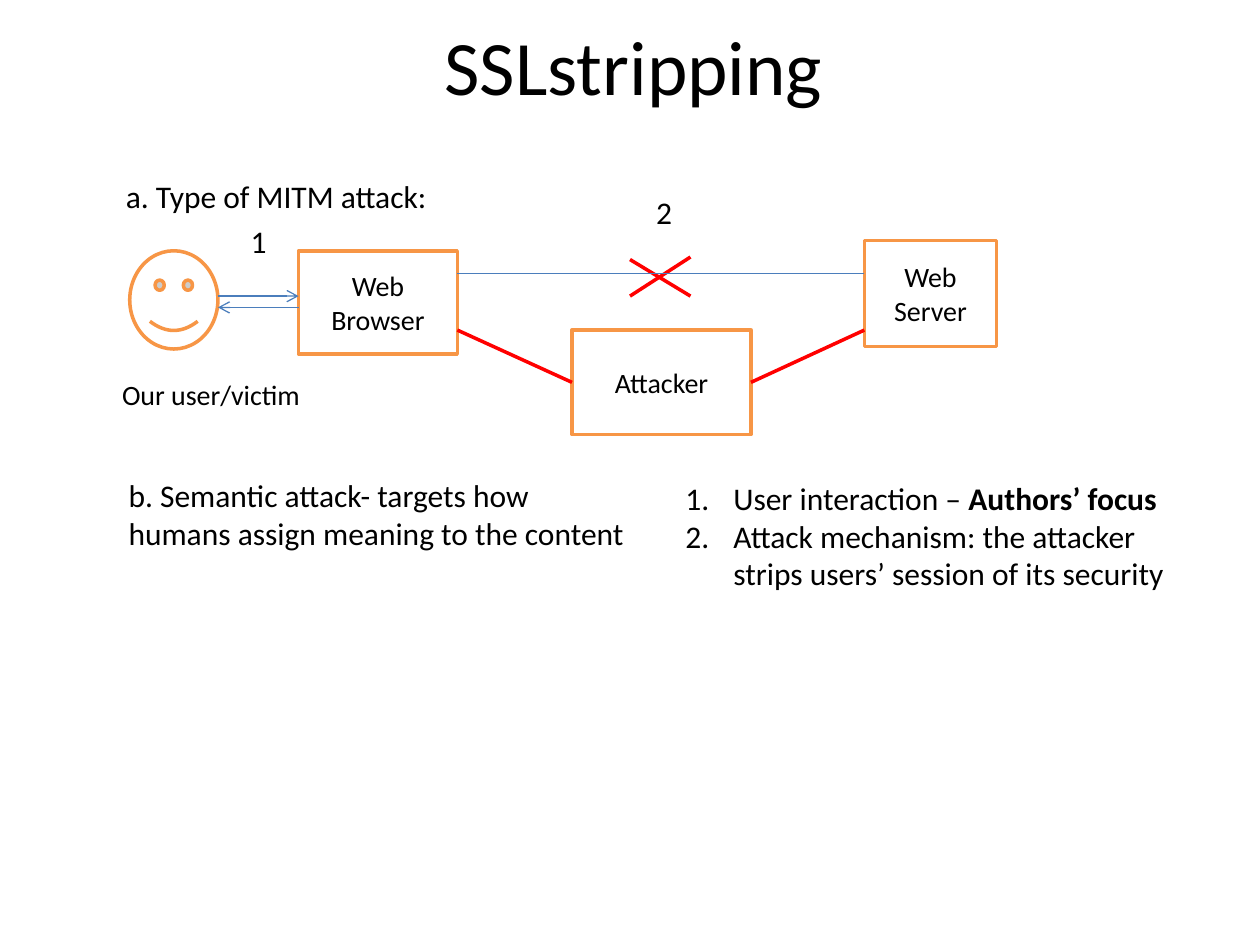
from lxml import etree
from pptx import Presentation, util as u
from pptx.dml.color import RGBColor
from pptx.enum import shapes, text
from pptx.oxml.ns import qn

TWO_CONTENT = 3


def colour(value):
    return RGBColor.from_string(value)


def write(frame, *paragraphs, size=18, align=text.PP_ALIGN.LEFT,
          anchor=text.MSO_ANCHOR.TOP, ink="000000", indent=None, numbered=False):
    """Fill a frame; each paragraph is a string or a list of (words, bold)."""
    frame.word_wrap = True
    frame.auto_size = text.MSO_AUTO_SIZE.NONE
    frame.vertical_anchor = anchor
    for index, content in enumerate(paragraphs):
        para = frame.paragraphs[0] if index == 0 else frame.add_paragraph()
        para.alignment = align
        para.space_before = u.Pt(0)
        if indent:
            para.level = 1
            left, first = indent
            properties = para._p.get_or_add_pPr()
            properties.set("marL", str(u.Inches(left)))
            properties.set("indent", str(u.Inches(first)))
            if numbered:
                etree.SubElement(properties, qn("a:buFont"), typeface="+mj-lt")
                etree.SubElement(properties, qn("a:buAutoNum"), type="arabicPeriod")
            else:
                etree.SubElement(properties, qn("a:buNone"))
        for words, bold in [(content, False)] if isinstance(content, str) else content:
            span = para.add_run()
            span.text = words
            span.font.name = "Calibri"
            span.font.size = u.Pt(size)
            span.font.bold = bold
            span.font.color.rgb = colour(ink)


class Diagram:
    OUTLINE, BLOCKED, TRAFFIC, PAPER = "F79646", "FF0000", "4B7EBC", "FFFFFF"

    def __init__(self, page):
        self.page = page

    def placeholder(self, number, area, *paragraphs, **style):
        holder = self.page.placeholders[number]
        holder.left, holder.top, holder.width, holder.height = map(u.Inches, area)
        write(holder.text_frame, *paragraphs, **style)

    def label(self, area, words, size=18):
        box = self.page.shapes.add_textbox(*map(u.Inches, area))
        write(box.text_frame, words, size=size)

    def node(self, area, *lines, kind=shapes.MSO_SHAPE.RECTANGLE):
        box = self.page.shapes.add_shape(kind, *map(u.Inches, area))
        box.shadow.inherit = False
        box.fill.solid()
        box.fill.fore_color.rgb = colour(self.PAPER)
        box.line.color.rgb = colour(self.OUTLINE)
        box.line.width = u.Pt(2)
        write(box.text_frame, *lines, size=16, align=text.PP_ALIGN.CENTER,
              anchor=text.MSO_ANCHOR.MIDDLE)
        return box

    def link(self, start, end, ink, width, arrow=False):
        line = self.page.shapes.add_connector(
            shapes.MSO_CONNECTOR.STRAIGHT, *map(u.Inches, start + end))
        line.line.color.rgb = colour(ink)
        line.line.width = u.Pt(width)
        if arrow:
            etree.SubElement(line.line._get_or_add_ln(), qn("a:tailEnd"), type="arrow")
        etree.SubElement(line._element.spPr, qn("a:effectLst"))
        return line


def main():
    deck = Presentation()
    deck.slide_width, deck.slide_height = u.Inches(10), u.Inches(7.5)
    page = deck.slides.add_slide(deck.slide_layouts[TWO_CONTENT])
    diagram = Diagram(page)

    diagram.placeholder(0, (0.78, 0, 8.5, 1.02), "SSLstripping", size=44,
                        align=text.PP_ALIGN.CENTER, anchor=text.MSO_ANCHOR.MIDDLE)
    diagram.placeholder(
        1, (0.42, 3.73, 4.71, 2.57),
        "b. Semantic attack- targets how humans assign meaning to the content",
        indent=(0.5, 0))
    diagram.placeholder(
        2, (4.84, 3.75, 4.69, 1.18),
        [("User interaction – ", False), ("Authors’ focus", True)],
        "Attack mechanism: the attacker strips users’ session of its security",
        indent=(0.88, -0.38), numbered=True)

    diagram.node((2.37, 1.99, 1.26, 0.82), "Web", "Browser")
    diagram.node((6.86, 1.91, 1.05, 0.84), "Web", "Server")
    diagram.node((1.03, 1.99, 0.7, 0.78), kind=shapes.MSO_SHAPE.SMILEY_FACE)
    attacker = diagram.node((4.54, 2.62, 1.42, 0.83), "Attacker")

    user_right, browser_left, browser_right, server_left = 1.73, 2.37, 3.63, 6.86
    red = (diagram.BLOCKED, 2)
    blue = (diagram.TRAFFIC, 0.75)
    diagram.link((browser_right, 2.62), (4.54, 3.03), *red).end_connect(attacker, 1)
    diagram.link((5.96, 3.03), (server_left, 2.62), *red).begin_connect(attacker, 3)
    diagram.link((5, 2.06), (5.48, 2.35), *red)
    diagram.link((5.48, 2.04), (5, 2.35), *red)
    diagram.link((browser_right, 2.17), (server_left, 2.17), *blue)
    diagram.link((user_right, 2.35), (browser_left, 2.35), *blue, arrow=True)
    diagram.link((browser_left, 2.44), (user_right, 2.44), *blue, arrow=True)

    diagram.label((0.9, 1.36, 4.62, 0.4), "a. Type of MITM attack:")
    diagram.label((0.87, 2.95, 1.82, 0.63), "Our user/victim", size=16)
    diagram.label((1.89, 1.71, 0.31, 0.4), "1")
    diagram.label((5.11, 1.48, 0.31, 0.4), "2")

    deck.save("out.pptx")


if __name__ == "__main__":
    main()
